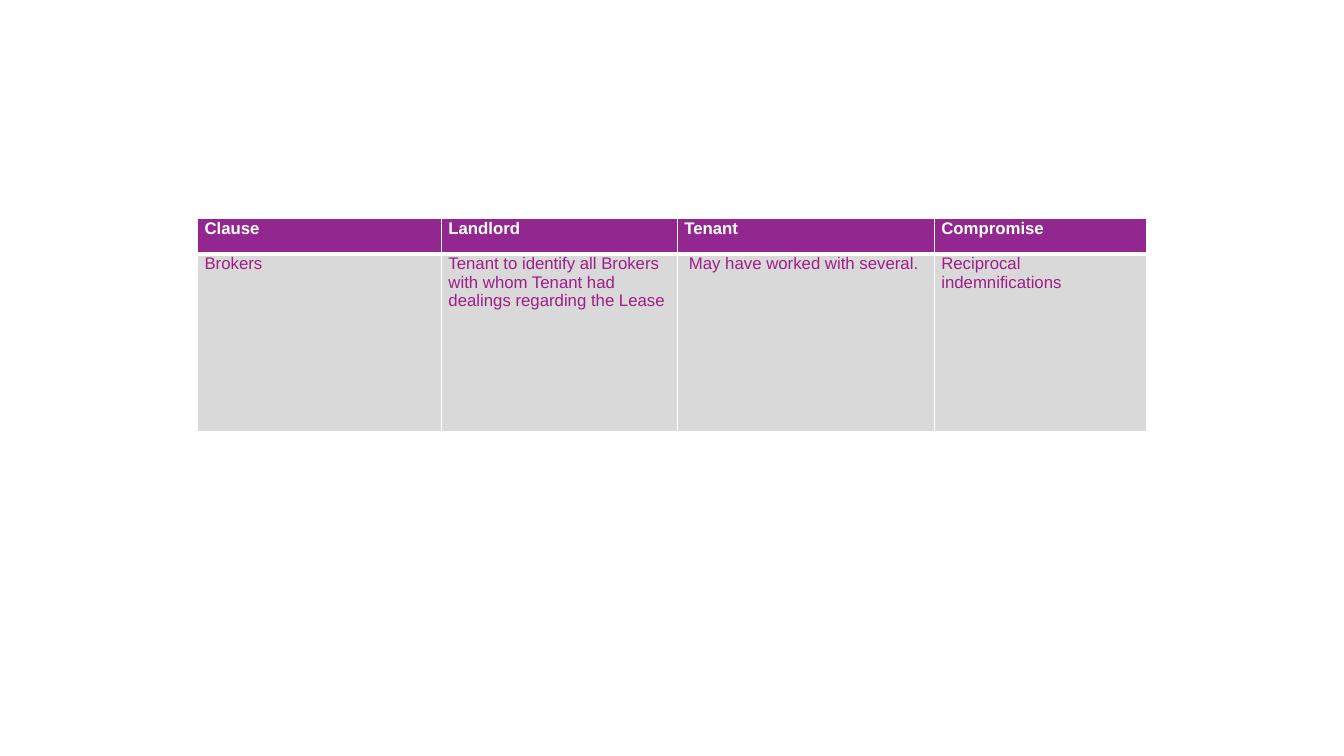
from lxml import etree
from pptx import Presentation
from pptx.dml.color import RGBColor
from pptx.oxml.ns import qn
from pptx.util import Pt

HEADINGS = ["Clause", "Landlord", "Tenant", "Compromise"]
TERMS = [
    "Brokers",
    "Tenant to identify all Brokers with whom Tenant had dealings regarding the Lease",
    " May have worked with several.",
    "Reciprocal indemnifications",
]
ROWS = [
    dict(texts=HEADINGS, height=25.2, fill="92278F", color="FFFFFF", bold=True,
         borders=dict(lnL=1, lnR=1, lnT=1, lnB=3)),
    dict(texts=TERMS, height=126.72, fill="D9D9D9", color="9F1D88", bold=False,
         borders=dict(lnL=1, lnR=1, lnT=3, lnB=1)),
]
COLUMN_WIDTHS = [174.24, 168.48, 183.6, 151.92]
TABLE_LEFT, TABLE_TOP = 141.12, 156.24
BORDER_COLOR = "FFFFFF"


def rgb(value):
    return RGBColor.from_string(value)


def write_text(frame, text, size=12, font="Arial", color="000000", bold=False):
    para = frame.paragraphs[0]
    span = para.add_run()
    span.text = text
    span.font.size = Pt(size)
    span.font.name = font
    span.font.bold = bold
    span.font.color.rgb = rgb(color)


def draw_borders(cell, borders):
    properties = cell._tc.get_or_add_tcPr()
    for side, width in borders.items():
        line = etree.SubElement(properties, qn("a:" + side), w=str(Pt(width)))
        solid = etree.SubElement(line, qn("a:solidFill"))
        etree.SubElement(solid, qn("a:srgbClr"), val=BORDER_COLOR)


def format_cell(cell, fill, borders):
    cell.margin_left = cell.margin_right = Pt(5)
    cell.margin_top = cell.margin_bottom = Pt(0)
    draw_borders(cell, borders)
    cell.fill.solid()
    cell.fill.fore_color.rgb = rgb(fill)


def add_clause_table(page):
    height = sum(row["height"] for row in ROWS)
    table = page.shapes.add_table(
        len(ROWS), len(COLUMN_WIDTHS), Pt(TABLE_LEFT), Pt(TABLE_TOP),
        Pt(sum(COLUMN_WIDTHS)), Pt(height)).table
    for column, width in zip(table.columns, COLUMN_WIDTHS):
        column.width = Pt(width)
    for table_row, row in zip(table.rows, ROWS):
        table_row.height = Pt(row["height"])
        for cell, text in zip(table_row.cells, row["texts"]):
            format_cell(cell, row["fill"], row["borders"])
            write_text(cell.text_frame, text, color=row["color"], bold=row["bold"])


def main():
    deck = Presentation()
    deck.slide_width, deck.slide_height = Pt(960), Pt(540)
    page = deck.slides.add_slide(deck.slide_layouts[6])
    add_clause_table(page)
    deck.save("out.pptx")


if __name__ == "__main__":
    main()
